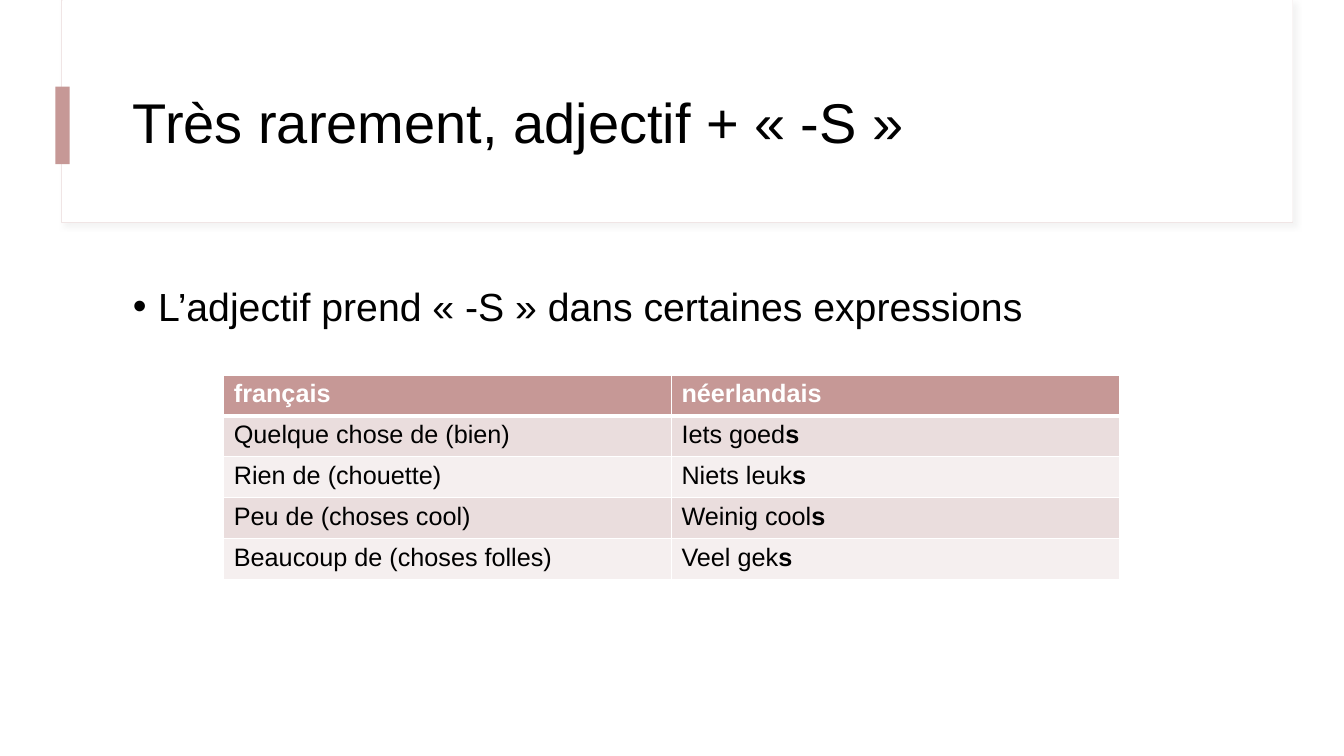
import pptx
import pptx.util
import pptx.dml.color
import pptx.enum.shapes
import pptx.enum.text
import pptx.oxml
import pptx.oxml.ns
from dataclasses import dataclass
from pptx.util import Inches


@dataclass(frozen=True)
class Theme:
    font: str = "Arial"
    black: str = "000000"
    white: str = "FFFFFF"
    rose: str = "C69896"
    band_dark: str = "EADDDD"
    band_light: str = "F5EFEF"
    frame: str = "F0E5E5"
    shadow: str = "D9D9D9"
    title_size: int = 40
    body_size: int = 28
    table_size: int = 18


theme = Theme()
rgb = pptx.dml.color.RGBColor.from_string
namespace = pptx.oxml.ns.nsdecls("a")


def set_font(paragraph, size, color, bold=None):
    paragraph.font.name = theme.font
    paragraph.font.size = pptx.util.Pt(size)
    paragraph.font.color.rgb = rgb(color)
    paragraph.font.bold = bold


presentation = pptx.Presentation()
presentation.slide_width = Inches(13.33)
presentation.slide_height = Inches(7.5)
slide = presentation.slides.add_slide(presentation.slide_layouts[6])

# Header frame with a soft shadow, white panel and accent bar
header_shapes = []
for left, top, width, height, color in (
    (0.61, 0, 12.21, 2.21, theme.white),
    (0.62, 0, 12.2, 2.2, theme.white),
    (0.55, 0.86, 0.14, 0.77, theme.rose),
):
    shape = slide.shapes.add_shape(
        pptx.enum.shapes.MSO_SHAPE.RECTANGLE,
        Inches(left), Inches(top), Inches(width), Inches(height),
    )
    shape.shadow.inherit = False
    shape.fill.solid()
    shape.fill.fore_color.rgb = rgb(color)
    shape.line.fill.background()
    header_shapes.append(shape)

frame = header_shapes[0]
frame.line.color.rgb = rgb(theme.frame)
frame.line.width = pptx.util.Pt(0.75)
effects = frame._element.spPr.find(pptx.oxml.ns.qn("a:effectLst"))
effects.append(pptx.oxml.parse_xml(
    f'<a:outerShdw {namespace} blurRad="{pptx.util.Pt(4)}" dist="{pptx.util.Pt(3)}" '
    f'dir="2700000" algn="tl" rotWithShape="0"><a:srgbClr val="{theme.shadow}">'
    '<a:alpha val="30000"/></a:srgbClr></a:outerShdw>'
))

# Title and bullet
anchors = pptx.enum.text.MSO_ANCHOR
text_paragraphs = []
for text, top, height, anchor, size, spacing in (
    ("Très rarement, adjectif + « -S »", 0.6, 1.29, anchors.MIDDLE, theme.title_size, 0.9),
    ("L’adjectif prend « -S » dans certaines expressions", 2.71, 4.04, anchors.TOP, theme.body_size, 1.1),
):
    text_box = slide.shapes.add_textbox(Inches(1.22), Inches(top), Inches(11.12), Inches(height))
    text_box.text_frame.word_wrap = True
    text_box.text_frame.vertical_anchor = anchor
    paragraph = text_box.text_frame.paragraphs[0]
    paragraph.text = text
    paragraph.line_spacing = spacing
    set_font(paragraph, size, theme.black)
    text_paragraphs.append(paragraph)

bullet = text_paragraphs[1]
bullet.space_before = pptx.util.Pt(10)
properties = bullet._p.get_or_add_pPr()
properties.set("marL", str(Inches(0.25)))
properties.set("indent", str(-Inches(0.25)))
bullet_mark = (
    f'<a:buFont {namespace} typeface="{theme.font}"/>',
    f'<a:buChar {namespace} char="•"/>',
)
default_run = properties.find(pptx.oxml.ns.qn("a:defRPr"))
for mark in bullet_mark:
    default_run.addprevious(pptx.oxml.parse_xml(mark))

# Table: the Dutch ending is a separate bold run
rows = (
    ("français", "néerlandais", ""),
    ("Quelque chose de (bien)", "Iets goed", "s"),
    ("Rien de (chouette)", "Niets leuk", "s"),
    ("Peu de (choses cool)", "Weinig cool", "s"),
    ("Beaucoup de (choses folles)", "Veel gek", "s"),
)
row_height = Inches(0.406)
table = slide.shapes.add_table(
    len(rows), 2, Inches(2.22), Inches(3.72), Inches(8.88), row_height * len(rows)
).table
for row_index, (french, dutch, ending) in enumerate(rows):
    table.rows[row_index].height = row_height
    is_header = row_index == 0
    if is_header:
        fill = theme.rose
    else:
        fill = theme.band_dark if row_index % 2 else theme.band_light
    for column_index, text in enumerate((french, dutch)):
        cell = table.cell(row_index, column_index)
        cell.fill.solid()
        cell.fill.fore_color.rgb = rgb(fill)
        paragraph = cell.text_frame.paragraphs[0]
        paragraph.add_run().text = text
        set_font(paragraph, theme.table_size, theme.white if is_header else theme.black, is_header)
        if column_index == 1 and ending:
            ending_run = paragraph.add_run()
            ending_run.text = ending
            ending_run.font.bold = True
        thick_sides = {0: "B", 1: "T"}
        for position, side in enumerate("LRTB"):
            width = pptx.util.Pt(3 if thick_sides.get(row_index) == side else 1)
            cell._tc.get_or_add_tcPr().insert(position, pptx.oxml.parse_xml(
                f'<a:ln{side} {namespace} w="{width}"><a:solidFill>'
                f'<a:srgbClr val="{theme.white}"/></a:solidFill></a:ln{side}>'
            ))

presentation.save("out.pptx")
